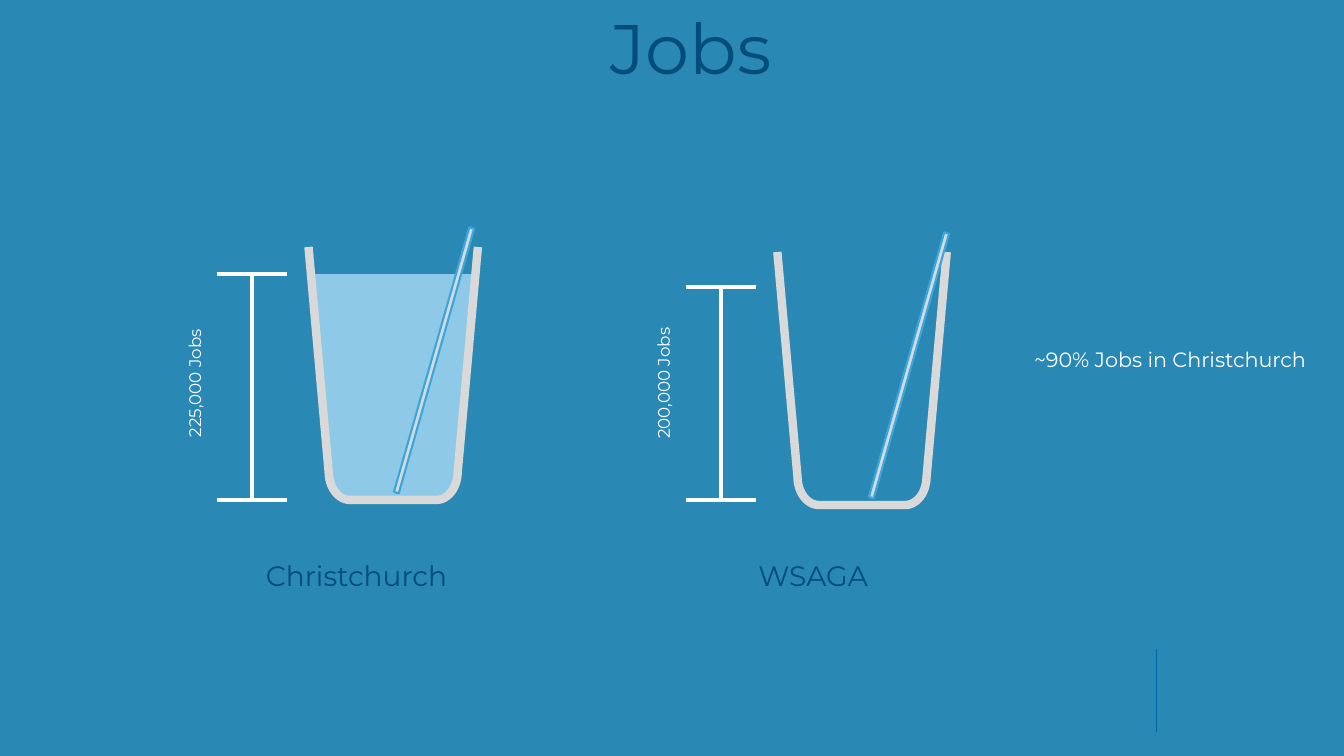
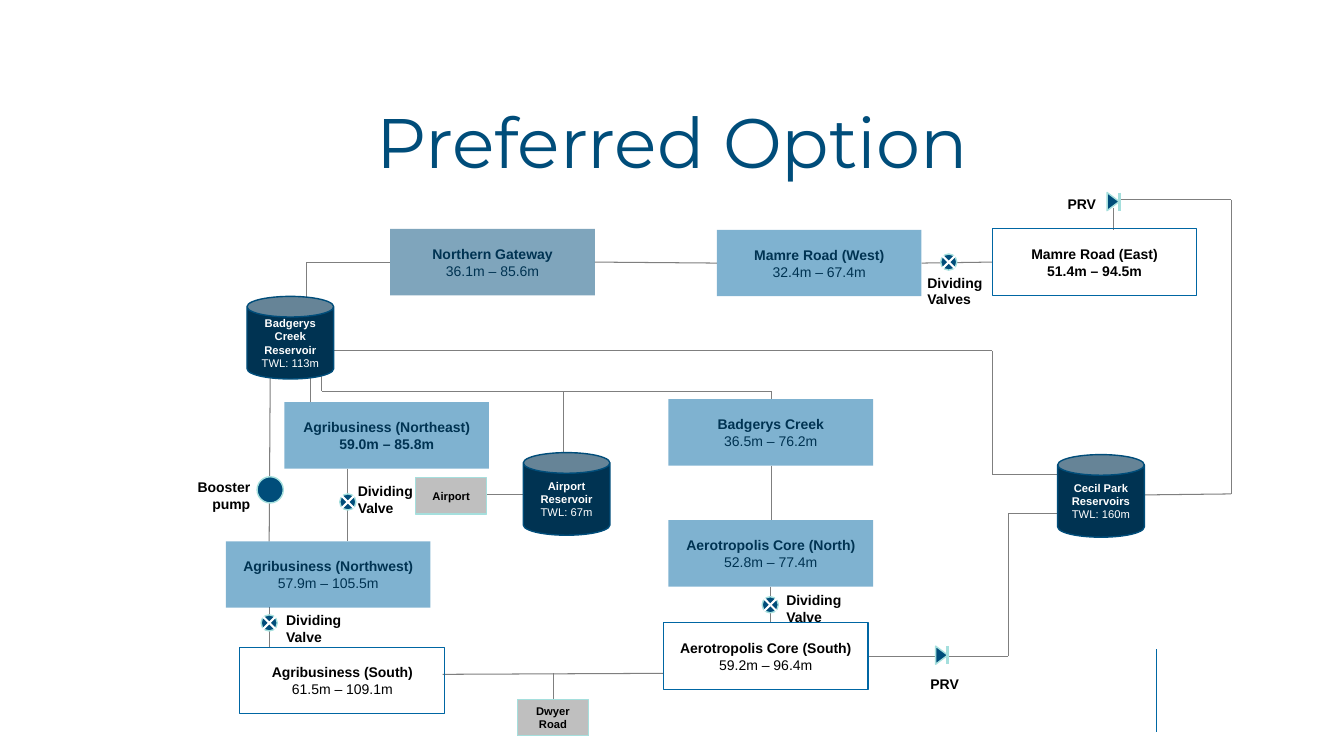
import pptx
import pptx.dml.color
import pptx.enum.shapes
import pptx.enum.text
import pptx.oxml
import pptx.oxml.ns
import pptx.util

Inches = pptx.util.Inches
SHAPES = pptx.enum.shapes.MSO_SHAPE
ALIGN = pptx.enum.text.PP_ALIGN
ANCHOR = pptx.enum.text.MSO_ANCHOR

COLORS = {
    "white": "FFFFFF", "black": "000000", "sea": "2A88B5", "navy": "004D7A",
    "ink": "003352", "blue": "0066A3", "rule": "0067A3", "water": "BAE5FF",
    "glass": "D9D9D9", "straw": "39A6DE", "pipe": "7F7F7F", "grey": "BFBFBF",
    "aqua": "A5DFDD",
}
HEADING_FONT = "Montserrat"
DIAGRAM_FONT = "Arial"


def rgb(name):
    return pptx.dml.color.RGBColor.from_string(COLORS[name])


def paint(shape, fill=None, line=None, weight=0.75, opacity=100):
    """Set fill, opacity and outline; None leaves a part empty."""
    shape.shadow.inherit = False
    if fill:
        shape.fill.solid()
        shape.fill.fore_color.rgb = rgb(fill)
        if opacity < 100:
            color = shape._element.spPr.find(
                pptx.oxml.ns.qn("a:solidFill")).find(pptx.oxml.ns.qn("a:srgbClr"))
            alpha = pptx.oxml.parse_xml(
                f'<a:alpha {pptx.oxml.ns.nsdecls("a")} val="{opacity * 1000}"/>')
            color.append(alpha)
    else:
        shape.fill.background()
    if line:
        shape.line.color.rgb = rgb(line)
        shape.line.width = pptx.util.Pt(weight)
    else:
        shape.line.fill.background()


def add_shape(canvas, kind, left, top, width, height, turn=0, **style):
    shape = canvas.add_shape(kind, Inches(left), Inches(top),
                             Inches(width), Inches(height))
    shape.rotation = turn
    paint(shape, **style)
    return shape


def add_line(canvas, start, end, color, weight):
    line = canvas.add_connector(pptx.enum.shapes.MSO_CONNECTOR.STRAIGHT,
                                *map(Inches, start + end))
    line.line.color.rgb = rgb(color)
    line.line.width = pptx.util.Pt(weight)
    effects = pptx.oxml.parse_xml(f'<a:effectLst {pptx.oxml.ns.nsdecls("a")}/>')
    line._element.spPr.append(effects)


def write(shape, lines, size, color, font, align=ALIGN.CENTER, spacing=None):
    """Fill a shape with (text, bold) lines."""
    frame = shape.text_frame
    frame.word_wrap = True
    for index, (text, bold) in enumerate(lines):
        para = frame.add_paragraph() if index else frame.paragraphs[0]
        para.text = text
        para.alignment = align
        if spacing:
            para.line_spacing = spacing
        para.font.size = pptx.util.Pt(size)
        para.font.name = font
        para.font.bold = bold
        para.font.color.rgb = rgb(color)


def add_label(canvas, box, text, size, color, font=HEADING_FONT, bold=False,
              turn=0, **layout):
    label = canvas.add_textbox(*map(Inches, box))
    label.rotation = turn
    write(label, [(text, bold)], size, color, font, **layout)


def add_page(deck, background, title, title_box):
    """Background, corner rule and title common to all slides."""
    page = deck.slides.add_slide(deck.slide_layouts[6])
    page.background.fill.solid()
    page.background.fill.fore_color.rgb = rgb(background)
    add_line(page.shapes, (11.47, 6.44), (11.47, 7.26), "rule", 0.5)
    add_label(page.shapes, title_box, title, 50, "navy")
    return page.shapes


# Glasses

def curve(start, pull_start, pull_end, end, steps=12):
    """Points of a cubic Bezier curve."""
    points = []
    for step in range(steps + 1):
        t = step / steps
        weights = ((1 - t) ** 3, 3 * t * (1 - t) ** 2, 3 * t * t * (1 - t), t ** 3)
        points.append(tuple(
            sum(weight * value for weight, value in zip(weights, values))
            for values in zip(start, pull_start, pull_end, end)))
    return points


def add_cup(canvas, left, top, width, height, closed, **style):
    """Tapered cup with a rounded base, open or closed at the rim."""
    inset, radius, bend = 0.2, 0.21, 0.28
    right_base = curve((width - inset, height - bend), (width - inset, height - 0.12),
                       (width - inset - 0.1, height), (width - inset - radius, height))
    left_base = [(width - x, y) for x, y in reversed(right_base)]
    outline = [(width, 0)] + right_base + left_base + [(0, 0)]
    points = [(Inches(left + x), Inches(top + y)) for x, y in outline]
    builder = canvas.build_freeform(*points[0], scale=1.0)
    builder.add_line_segments(points[1:], close=closed)
    paint(builder.convert_to_shape(), **style)


def add_glass(canvas, left, top, name, name_shift, jobs, level, straw_shift, full):
    """Glass with straw, measuring bar and labels, from its upper left corner."""
    floor = 4.95
    if full:
        add_cup(canvas, left + 0.04, top + 0.27, 1.6, 2.27, True,
                fill="water", opacity=70)
    add_cup(canvas, left, top, 1.68, 2.51, False, line="glass", weight=6)
    add_shape(canvas, SHAPES.RECTANGLE, left + straw_shift, top - 0.24, 0.05, 2.73,
              turn=15.9, fill="glass", line="straw", weight=1.5)
    # Measuring bar
    middle, arm = left - 0.56, 0.35
    add_line(canvas, (middle, level), (middle, floor), "white", 3)
    for mark in (level, floor + 0.01):
        add_line(canvas, (middle - arm, mark), (middle + arm, mark), "white", 3)
    # Labels
    add_label(canvas, (left - 1.9, 3.45, 1.9, 0.7), jobs, 12, "white",
              turn=270, spacing=1.1)
    add_label(canvas, (left + name_shift, 5.46, 3.31, 0.66), name, 20, "navy",
              spacing=1.1)


def build_jobs(deck):
    canvas = add_page(deck, "sea", "Jobs", (1.49, 0, 10.73, 1.09))
    add_glass(canvas, 3.06, 2.45, "Christchurch", -1.18, "225,000 Jobs", 2.72, 1.22, True)
    add_glass(canvas, 7.71, 2.5, "WSAGA", -1.3, "200,000 Jobs", 2.85, 1.28, False)
    add_label(canvas, (9.95, 3.37, 3.31, 0.66), "~90% Jobs in Christchurch",
              14.8, "white", spacing=1.1)


# Water network

PIPES = [
    [(3.04, 2.95), (3.04, 2.6), (3.87, 2.6)],
    [(5.9, 2.6), (7.11, 2.61)],
    [(9.14, 2.61), (9.84, 2.6)],
    [(11.04, 2.06), (11.04, 2.28)],
    [(11.11, 1.98), (12.21, 1.98), (12.21, 4.9), (11.35, 4.91)],
    [(3.3, 3.48), (9.84, 3.48), (9.84, 4.71), (10.49, 4.71)],
    [(3.19, 3.72), (3.19, 3.88), (7.65, 3.88), (7.65, 3.96)],
    [(5.59, 3.88), (5.59, 4.49)],
    [(3.08, 3.75), (3.08, 3.99)],
    [(2.68, 3.75), (2.67, 5.37)],
    [(3.45, 4.65), (3.45, 5.37)],
    [(4.83, 4.91), (5.19, 4.91)],
    [(7.65, 4.62), (7.65, 5.16)],
    [(7.64, 5.82), (7.64, 6.18)],
    [(2.67, 6.02), (2.67, 6.42)],
    [(4.39, 6.69), (6.58, 6.68)],
    [(5.49, 6.68), (5.49, 6.94)],
    [(8.61, 6.51), (10, 6.51), (10, 5.09), (10.49, 5.09)],
]
ZONE_STYLES = {
    "supplied": dict(fill="blue", opacity=50),
    "gateway": dict(fill="navy", opacity=50),
    "outlined": dict(line="blue"),
}
# left, top, name, range of levels, style, whether the range is bold
ZONES = [
    (3.87, 2.27, "Northern Gateway", "36.1m – 85.6m", "gateway", False),
    (7.11, 2.28, "Mamre Road (West)", "32.4m – 67.4m", "supplied", False),
    (9.84, 2.27, "Mamre Road (East)", "51.4m – 94.5m", "outlined", True),
    (2.82, 3.99, "Agribusiness (Northeast)", "59.0m – 85.8m", "supplied", True),
    (6.63, 3.96, "Badgerys Creek", "36.5m – 76.2m", "supplied", False),
    (6.63, 5.16, "Aerotropolis Core (North)", "52.8m – 77.4m", "supplied", False),
    (2.24, 5.37, "Agribusiness (Northwest)", "57.9m – 105.5m", "supplied", False),
    (6.58, 6.18, "Aerotropolis Core (South)", "59.2m – 96.4m", "outlined", False),
    (2.38, 6.42, "Agribusiness (South)", "61.5m – 109.1m", "outlined", False),
]
RESERVOIRS = [
    (2.45, 2.94, "Badgerys Creek Reservoir", "TWL: 113m"),
    (5.19, 4.49, "Airport Reservoir", "TWL: 67m"),
    (10.49, 4.51, "Cecil Park Reservoirs", "TWL: 160m"),
]
CUSTOMERS = [(4.12, 4.74, "Airport"), (5.13, 6.94, "Dwyer Road")]
VALVES = [(9.41, 2.6), (3.45, 4.98), (7.64, 6), (2.67, 6.18)]
REDUCERS = [(11.04, 2), (9.34, 6.5)]
NOTES = [
    ((10.49, 1.89, 0.51, 0.27), "PRV", ALIGN.LEFT),
    ((9.13, 6.65, 0.71, 0.27), "PRV", ALIGN.LEFT),
    ((9.1, 2.67, 0.8, 0.44), "Dividing Valves", ALIGN.LEFT),
    ((3.45, 4.74, 0.75, 0.44), "Dividing Valve", ALIGN.LEFT),
    ((7.7, 5.82, 0.88, 0.44), "Dividing Valve", ALIGN.LEFT),
    ((2.74, 6.02, 0.79, 0.44), "Dividing Valve", ALIGN.LEFT),
    ((1.81, 4.7, 0.77, 0.44), "Booster pump", ALIGN.RIGHT),
]


def add_node(canvas, kind, box, lines, size, color, **style):
    node = add_shape(canvas, kind, *box, **style)
    node.text_frame.vertical_anchor = ANCHOR.MIDDLE
    write(node, lines, size, color, DIAGRAM_FONT)


def add_valve(canvas, x, y):
    """Crossed circle around a centre."""
    parts = canvas.add_group_shape().shapes
    add_shape(parts, SHAPES.OVAL, x - 0.08, y - 0.08, 0.16, 0.16,
              fill="navy", line="aqua", weight=1)
    reach = 0.06
    for slope in (reach, -reach):
        add_line(parts, (x - reach, y - slope), (x + reach, y + slope), "white", 1.5)


def add_reducer(canvas, x, y):
    """Triangle against a bar, around a centre."""
    parts = canvas.add_group_shape().shapes
    add_shape(parts, SHAPES.ISOSCELES_TRIANGLE, x - 0.09, y - 0.06, 0.18, 0.12,
              turn=90, fill="navy", line="aqua", weight=1)
    add_line(parts, (x + 0.06, y - 0.09), (x + 0.06, y + 0.09), "aqua", 2.25)


def build_network(deck):
    canvas = add_page(deck, "white", "Preferred Option", (3.19, 0.93, 6.96, 1.09))
    for route in PIPES:
        for start, end in zip(route, route[1:]):
            add_line(canvas, start, end, "pipe", 0.75)
    # Zones, reservoirs and customers
    for left, top, name, levels, style, bold in ZONES:
        color = "black" if style == "outlined" else "ink"
        add_node(canvas, SHAPES.RECTANGLE, (left, top, 2.03, 0.66),
                 [(name, True), (levels, bold)], 10, color, **ZONE_STYLES[style])
    for left, top, name, level in RESERVOIRS:
        add_node(canvas, SHAPES.CAN, (left, top, 0.86, 0.82),
                 [(name, True), (level, False)], 8, "white",
                 fill="ink", line="navy", weight=1)
    for left, top, name in CUSTOMERS:
        add_node(canvas, SHAPES.RECTANGLE, (left, top, 0.71, 0.36),
                 [(name, True)], 8, "black", fill="grey", line="aqua")
    # Pump, valves and their labels
    add_shape(canvas, SHAPES.OVAL, 2.55, 4.73, 0.26, 0.26,
              fill="navy", line="aqua", weight=1)
    for x, y in VALVES:
        add_valve(canvas, x, y)
    for x, y in REDUCERS:
        add_reducer(canvas, x, y)
    for box, text, align in NOTES:
        add_label(canvas, box, text, 10, "black", DIAGRAM_FONT, True, align=align)


def main():
    deck = pptx.Presentation()
    deck.slide_width, deck.slide_height = Inches(13.33), Inches(7.5)
    build_jobs(deck)
    build_network(deck)
    deck.save("out.pptx")


if __name__ == "__main__":
    main()
